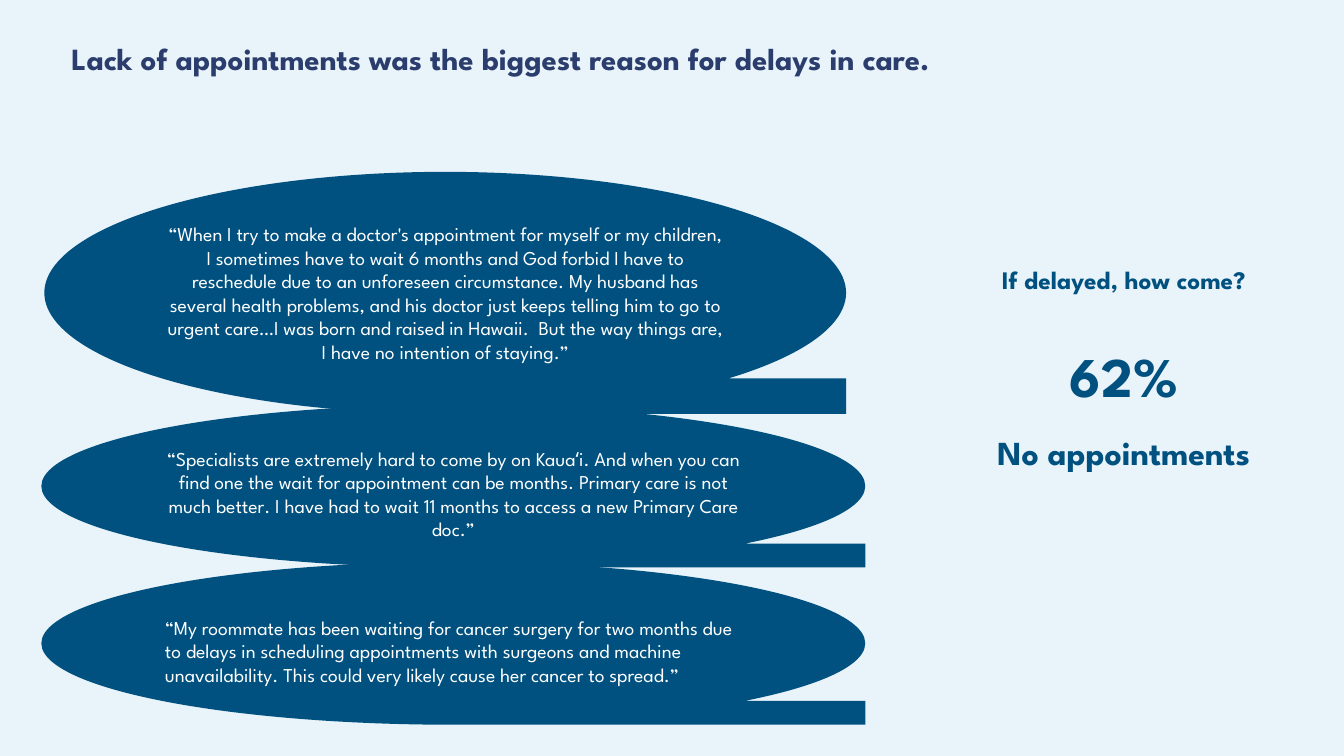
import dataclasses

import pptx
import pptx.dml.color
import pptx.enum.shapes
import pptx.enum.text
import pptx.util

Inches = pptx.util.Inches
Pt = pptx.util.Pt
ALIGN = pptx.enum.text.PP_ALIGN
ANCHOR = pptx.enum.text.MSO_ANCHOR


@dataclasses.dataclass(frozen=True)
class Theme:
    font: str = "League Spartan"
    back: str = "E8F3FA"
    blue: str = "00517F"
    navy: str = "2B3D6D"
    white: str = "FFFFFF"
    title: int = 44
    quote: int = 28
    ask: int = 36
    stat: int = 80
    label: int = 48


THEME = Theme()

# left, top, width, height, extra top inset, alignment, text
QUOTES = [
    (0.88, 3.41, 15.91, 4.8, 0, ALIGN.CENTER,
     "“When I try to make a doctor's appointment for myself or my children, "
     "I sometimes have to wait 6 months and God forbid I have to reschedule "
     "due to an unforeseen circumstance. My husband has several health "
     "problems, and his doctor just keeps telling him to go to urgent "
     "care…I was born and raised in Hawaii.  But the way things are, "
     "I have no intention of staying.”"),
    (0.82, 8.03, 16.35, 3.23, 0.3, ALIGN.CENTER,
     "“Specialists are extremely hard to come by on Kauaʻi. And when you can "
     "find one the wait for appointment can be months. Primary care is not "
     "much better. I have had to wait 11 months to access a new Primary "
     "Care doc.”"),
    (0.82, 11.15, 16.35, 3.23, 0.3, ALIGN.LEFT,
     "“My roommate has been waiting for cancer surgery for two months due to "
     "delays in scheduling appointments with surgeons and machine "
     "unavailability. This could very likely cause her cancer to spread.”"),
]


def color(code):
    return pptx.dml.color.RGBColor.from_string(code)


def write(par, text, size, ink, bold=False, align=ALIGN.LEFT, before=0, line=None):
    par.alignment = align
    if before:
        par.space_before = Pt(before)
    if line:
        par.line_spacing = line
    run = par.add_run()
    run.text = text
    run.font.name = THEME.font
    run.font.size = Pt(size)
    run.font.bold = bold
    run.font.color.rgb = color(ink)


def add_box(slide, left, top, width, height):
    """Add a wrapping text box and return its text frame."""
    box = slide.shapes.add_textbox(
        Inches(left), Inches(top), Inches(width), Inches(height))
    box.text_frame.word_wrap = True
    return box.text_frame


def add_quote(slide, left, top, width, height, drop, align, text):
    """Add a speech bubble; drop lowers its text below the middle."""
    shape = slide.shapes.add_shape(
        pptx.enum.shapes.MSO_SHAPE.FLOWCHART_SEQUENTIAL_ACCESS_STORAGE,
        Inches(left), Inches(top), Inches(width), Inches(height))
    shape.shadow.inherit = False
    shape.fill.solid()
    shape.fill.fore_color.rgb = color(THEME.blue)
    shape.line.fill.background()
    frame = shape.text_frame
    frame.word_wrap = True
    frame.vertical_anchor = ANCHOR.MIDDLE
    frame.margin_left = frame.margin_right = frame.margin_bottom = Inches(0.06)
    frame.margin_top = Inches(0.06 + drop)
    write(frame.paragraphs[0], text, THEME.quote, THEME.white, align=align)


def add_stat(slide):
    frame = add_box(slide, 18, 5.19, 8.6, 4.28)
    rows = [
        ("If delayed, how come?", THEME.ask, 0),
        ("62%", THEME.stat, 67),
        ("No appointments", THEME.label, 33.5),
    ]
    for i, (text, size, gap) in enumerate(rows):
        par = frame.add_paragraph() if i else frame.paragraphs[0]
        write(par, text, size, THEME.blue, bold=True,
              align=ALIGN.CENTER, before=gap)


def main():
    deck = pptx.Presentation()
    deck.slide_width = Inches(26.67)
    deck.slide_height = Inches(15)
    slide = deck.slides.add_slide(deck.slide_layouts[6])
    slide.background.fill.solid()
    slide.background.fill.fore_color.rgb = color(THEME.back)

    title = add_box(slide, 1.32, 0.6, 24.03, 2.04)
    write(title.paragraphs[0],
          "Lack of appointments was the biggest reason for delays in care.",
          THEME.title, THEME.navy, bold=True, line=1.2)
    add_stat(slide)
    for quote in QUOTES:
        add_quote(slide, *quote)
    deck.save("out.pptx")


if __name__ == "__main__":
    main()
